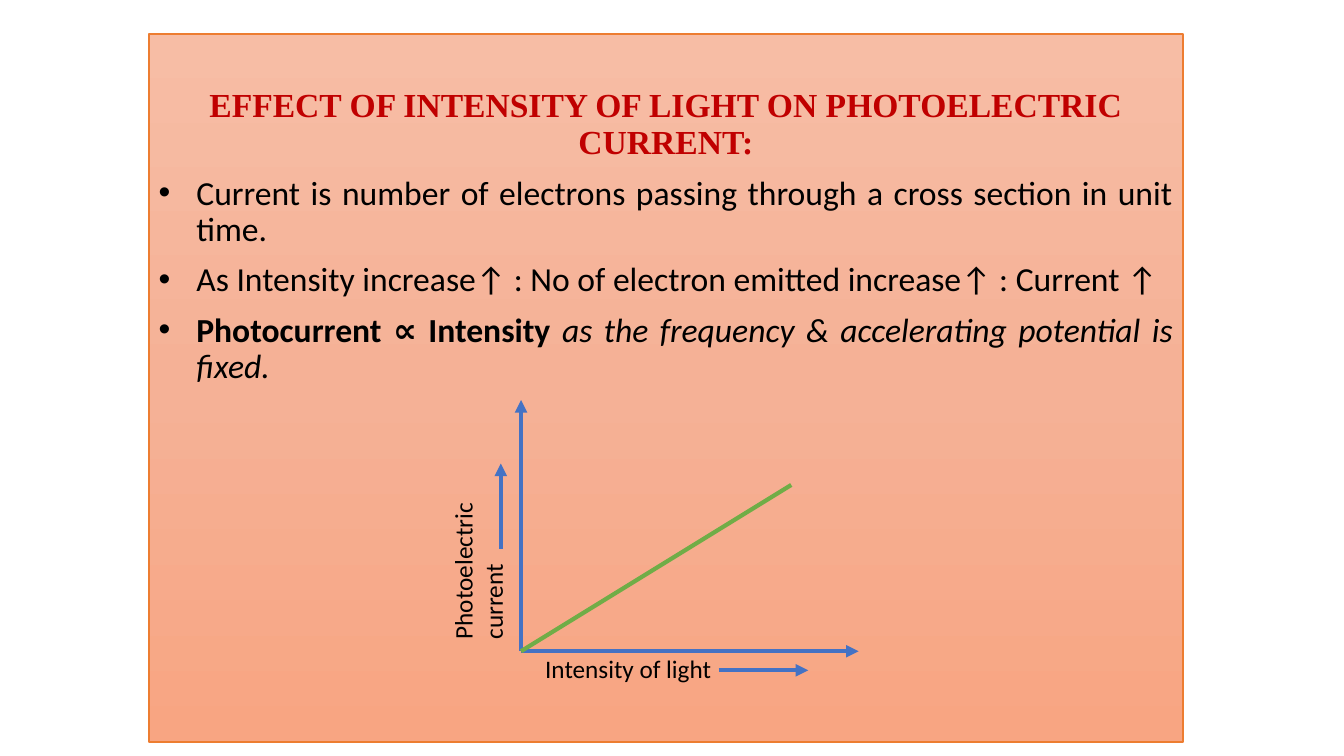
from copy import deepcopy

from lxml.etree import SubElement
from pptx import Presentation
from pptx.dml.color import RGBColor
from pptx.enum.shapes import MSO_CONNECTOR, MSO_SHAPE
from pptx.enum.text import MSO_ANCHOR, MSO_AUTO_SIZE, PP_ALIGN
from pptx.oxml.ns import qn
from pptx.util import Cm, Pt

BLACK = RGBColor(0x00, 0x00, 0x00)
RED = RGBColor(0xC0, 0x00, 0x00)
ORANGE = RGBColor(0xED, 0x7D, 0x31)
BLUE = RGBColor(0x44, 0x72, 0xC4)
GREEN = RGBColor(0x70, 0xAD, 0x47)
PEACH = [RGBColor(0xF7, 0xBD, 0xA5), RGBColor(0xF5, 0xB1, 0x96), RGBColor(0xF8, 0xA5, 0x82)]

PANEL_LEFT, PANEL_TOP, PANEL_WIDTH, PANEL_HEIGHT = Cm(3.75), Cm(0.86), Cm(26.06), Cm(17.83)

prs = Presentation()
prs.slide_width, prs.slide_height = Cm(33.87), Cm(19.05)
slide = prs.slides.add_slide(prs.slide_layouts[5])

# Panel with a three-stop gradient
panel = slide.shapes.add_shape(MSO_SHAPE.RECTANGLE, PANEL_LEFT, PANEL_TOP, PANEL_WIDTH, PANEL_HEIGHT)
panel.shadow.inherit = False
panel.line.color.rgb = ORANGE
panel.line.width = Pt(1.5)
panel.fill.gradient()
panel.fill.gradient_angle = 270
stop_list = panel._element.spPr.find(".//" + qn("a:gsLst"))
stop_list.insert(1, deepcopy(stop_list[0]))
for stop, position, color in zip(panel.fill.gradient_stops, (0, 0.5, 1), PEACH):
    stop.position = position
    stop.color.rgb = color

# Bullets, below the space kept for the title
statements = [
    [("Current is number of electrons passing through a cross section in unit time.", False, False)],
    [("As Intensity increase↑ : No of electron emitted increase↑ : Current ↑", False, False)],
    [("Photocurrent ∝ Intensity ", True, False),
     ("as the frequency & accelerating potential is fixed.", False, True)],
]
body = panel.text_frame
body.word_wrap = True
body.vertical_anchor = MSO_ANCHOR.TOP
body.margin_top = Cm(3.58)
for number, statement in enumerate(statements):
    bullet = body.add_paragraph() if number else body.paragraphs[0]
    bullet.alignment = PP_ALIGN.JUSTIFY
    bullet.line_spacing = 0.9
    bullet.space_before = Pt(10 if number else 0)
    bullet.font.name = "Calibri"
    bullet.font.size = Pt(24)
    bullet.font.color.rgb = BLACK
    properties = bullet._p.get_or_add_pPr()
    properties.set("marL", str(Cm(0.95)))
    properties.set("indent", str(-Cm(0.95)))
    bullet_font = SubElement(properties, qn("a:buFont"), typeface="Arial")
    bullet_font.addnext(properties.makeelement(qn("a:buChar"), {"char": "•"}))
    properties.append(properties.find(qn("a:defRPr")))
    for text, bold, italic in statement:
        run = bullet.add_run()
        run.text = text
        run.font.bold = bold
        run.font.italic = italic

# Title, brought in front of the panel
title = slide.shapes.title
title.left, title.top, title.width, title.height = PANEL_LEFT, Cm(2.24), PANEL_WIDTH, Cm(1.84)
panel._element.addnext(title._element)
heading = title.text_frame
heading.word_wrap = True
heading.auto_size = MSO_AUTO_SIZE.NONE
heading.vertical_anchor = MSO_ANCHOR.TOP
heading.margin_top = heading.margin_bottom = 0
heading.text = "EFFECT OF INTENSITY OF LIGHT ON PHOTOELECTRIC CURRENT:"
heading_line = heading.paragraphs[0]
heading_line.alignment = PP_ALIGN.CENTER
heading_line.line_spacing = 0.9
heading_line.font.name = "Times New Roman"
heading_line.font.size = Pt(24)
heading_line.font.bold = True
heading_line.font.color.rgb = RED

# Graph: axes, direction arrows and the straight plot
graph = slide.shapes.add_group_shape()
ORIGIN = (13.13, 16.41)
lines = [
    (ORIGIN, (13.13, 10.08), BLUE, True),
    (ORIGIN, (21.64, 16.41), BLUE, True),
    ((12.62, 13.84), (12.62, 11.68), BLUE, True),
    ((18.11, 16.89), (20.37, 16.89), BLUE, True),
    (ORIGIN, (19.94, 12.22), GREEN, False),
]
for start, end, color, has_arrow in lines:
    line = graph.shapes.add_connector(MSO_CONNECTOR.STRAIGHT, *map(Cm, start + end))
    line.line.color.rgb = color
    line.line.width = Pt(3)
    if has_arrow:
        SubElement(line.line._get_or_add_ln(), qn("a:tailEnd"), type="triangle")
    SubElement(line._element.spPr, qn("a:effectLst"))

# Axis labels
labels = [
    ("Photoelectric current", (11.15, 12.22, 2.06, 4.14), "vert270"),
    ("Intensity of light", (13.49, 16.33, 5.21, 1.02), "horz"),
]
for text, place, direction in labels:
    label = graph.shapes.add_textbox(*map(Cm, place)).text_frame
    label.word_wrap = True
    label._txBody.bodyPr.set("vert", direction)
    label.text = text
    caption = label.paragraphs[0]
    caption.font.name = "Calibri"
    caption.font.size = Pt(18)
    caption.font.color.rgb = BLACK

prs.save("out.pptx")
